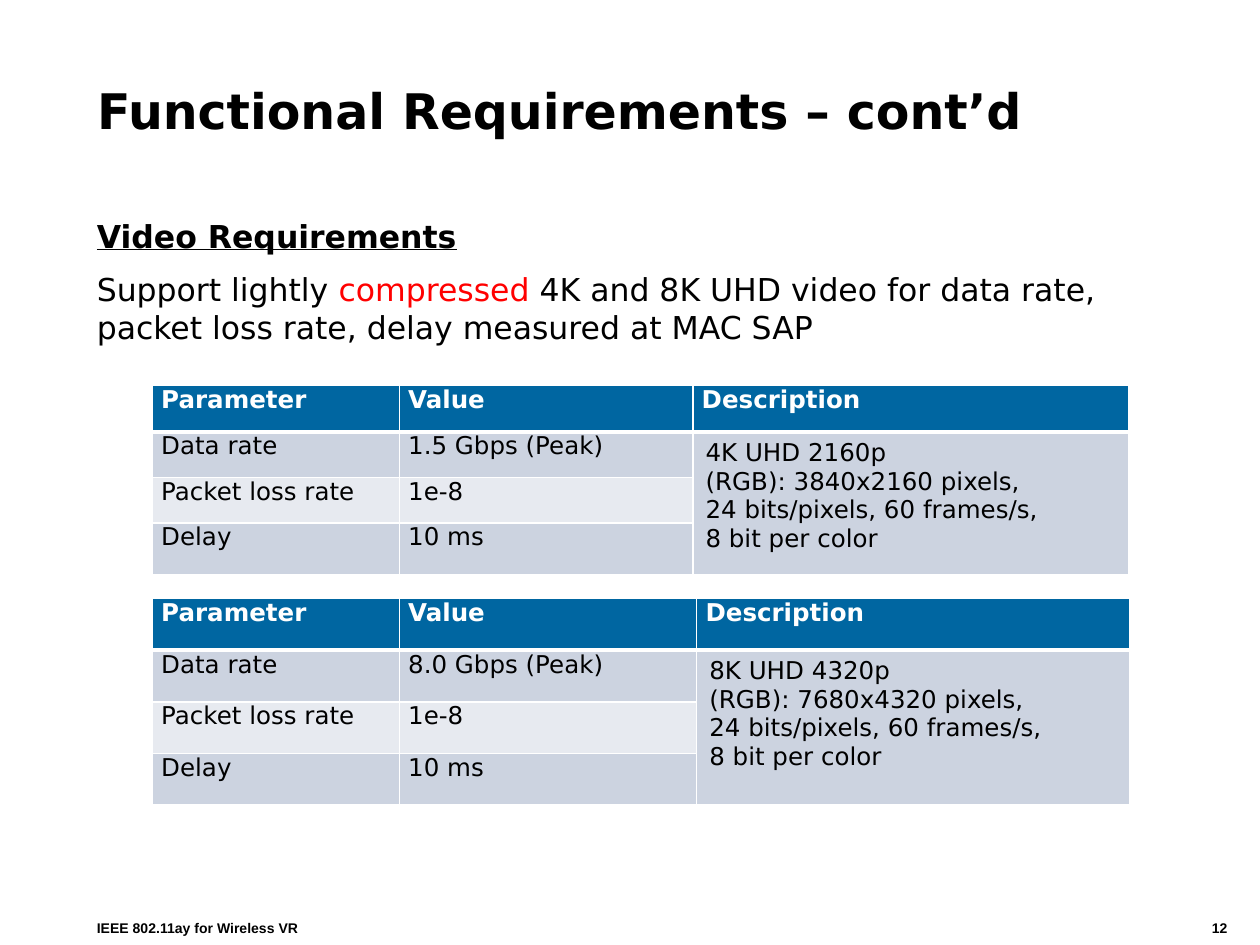
from lxml import etree
from pptx import Presentation
from pptx.dml.color import RGBColor
from pptx.enum.text import MSO_ANCHOR, MSO_AUTO_SIZE, PP_ALIGN
from pptx.oxml.ns import qn
from pptx.util import Inches, Pt

LEFT, TOP, BOTTOM = PP_ALIGN.LEFT, MSO_ANCHOR.TOP, MSO_ANCHOR.BOTTOM
FIXED = MSO_AUTO_SIZE.NONE

BLACK = RGBColor(0x00, 0x00, 0x00)
WHITE = RGBColor(0xFF, 0xFF, 0xFF)
RED = RGBColor(0xFF, 0x00, 0x00)
BLUE = RGBColor(0x00, 0x66, 0xA1)
GREY = RGBColor(0xCC, 0xD3, 0xE0)
PALE = RGBColor(0xE7, 0xEA, 0xF0)

SANS = "DejaVu Sans"
HEAD = dict(name=SANS, size=Pt(28), bold=True)
SUB = dict(name=SANS, size=Pt(18), bold=True, underline=True)
BODY = dict(name=SANS, size=Pt(18), bold=False)
CELL = dict(name=SANS, size=Pt(14))
FOOT = dict(name="Arial", size=Pt(8), bold=True)


def add_run(para, text, style, color=BLACK):
    run = para.add_run()
    run.text = text
    for key, value in style.items():
        setattr(run.font, key, value)
    run.font.color.rgb = color


def add_edge(cell, side, width):
    props = cell._tc.get_or_add_tcPr()
    line = etree.SubElement(props, qn("a:ln" + side), w=str(Pt(width)))
    fill = etree.SubElement(line, qn("a:solidFill"))
    etree.SubElement(fill, qn("a:srgbClr"), val=str(WHITE))


deck = Presentation()
deck.slide_width, deck.slide_height = Inches(10), Inches(7.5)
slide = deck.slides.add_slide(deck.slide_layouts[5])

# Title
title = slide.shapes.title
title.left, title.top = Inches(0.67), Inches(0.33)
title.width, title.height = Inches(8.83), Inches(0.83)
frame = title.text_frame
frame.auto_size, frame.vertical_anchor = FIXED, BOTTOM
frame.paragraphs[0].alignment = LEFT
add_run(frame.paragraphs[0], "Functional Requirements – cont’d", HEAD)

# Body text
body = slide.shapes.add_textbox(Inches(0.67), Inches(1.67), Inches(8.83), Inches(1.21))
frame = body.text_frame
frame.word_wrap = True
add_run(frame.paragraphs[0], "Video Requirements", SUB)
para = frame.add_paragraph()
para.space_before = Pt(9)
add_run(para, "Support lightly ", BODY)
add_run(para, "compressed", BODY, RED)
add_run(para, " 4K and 8K UHD video for data rate, packet loss rate, "
        "delay measured at MAC SAP", BODY)

# Requirement tables: top, column widths, row heights, rate, format, pixels
TABLES = [
    (3.06, [1.96, 2.33, 3.46], [0.37, 0.36, 0.36, 0.41],
     "1.5 Gbps (Peak)", "4K UHD 2160p", "3840x2160"),
    (4.75, [1.96, 2.36, 3.44], [0.41] * 4,
     "8.0 Gbps (Peak)", "8K UHD 4320p", "7680x4320"),
]
for top, widths, heights, rate, video, pixels in TABLES:
    notes = [video, f"(RGB): {pixels} pixels,",
             "24 bits/pixels, 60 frames/s,", "8 bit per color"]
    rows = [
        (["Parameter"], ["Value"], ["Description"]),
        (["Data rate"], [rate], notes),
        (["Packet loss rate"], ["1e-8"], []),
        (["Delay"], ["10 ms"], []),
    ]
    table = slide.shapes.add_table(
        4, 3, Inches(1.21), Inches(top),
        Inches(sum(widths)), Inches(sum(heights))).table
    for col, width in zip(table.columns, widths):
        col.width = Inches(width)
    for row, height in zip(table.rows, heights):
        row.height = Inches(height)
    table.cell(1, 2).merge(table.cell(3, 2))

    for r, row in enumerate(rows):
        for c, lines in enumerate(row):
            cell = table.cell(r, c)
            if lines is not notes:
                cell.margin_left = cell.margin_right = Inches(0.07)
                cell.margin_top = cell.margin_bottom = 0
            for side in "LRTB":
                thick = (r, side) in [(0, "B"), (1, "T")]
                add_edge(cell, side, 3 if thick else 1)
            cell.fill.solid()
            shade = PALE if r == 2 and c < 2 else GREY
            cell.fill.fore_color.rgb = BLUE if r == 0 else shade
            frame = cell.text_frame
            for i, line in enumerate(lines):
                para = frame.add_paragraph() if i else frame.paragraphs[0]
                add_run(para, line, {**CELL, "bold": r == 0},
                        WHITE if r == 0 else BLACK)

# Footer and page number
for left, width, text in [(0.67, 5.25, "IEEE 802.11ay for Wireless VR"),
                          (9.52, 0.48, "12")]:
    box = slide.shapes.add_textbox(Inches(left), Inches(7.25), Inches(width), Inches(0.25))
    frame = box.text_frame
    frame.word_wrap, frame.vertical_anchor = True, TOP
    add_run(frame.paragraphs[0], text, FOOT)

deck.save("out.pptx")
